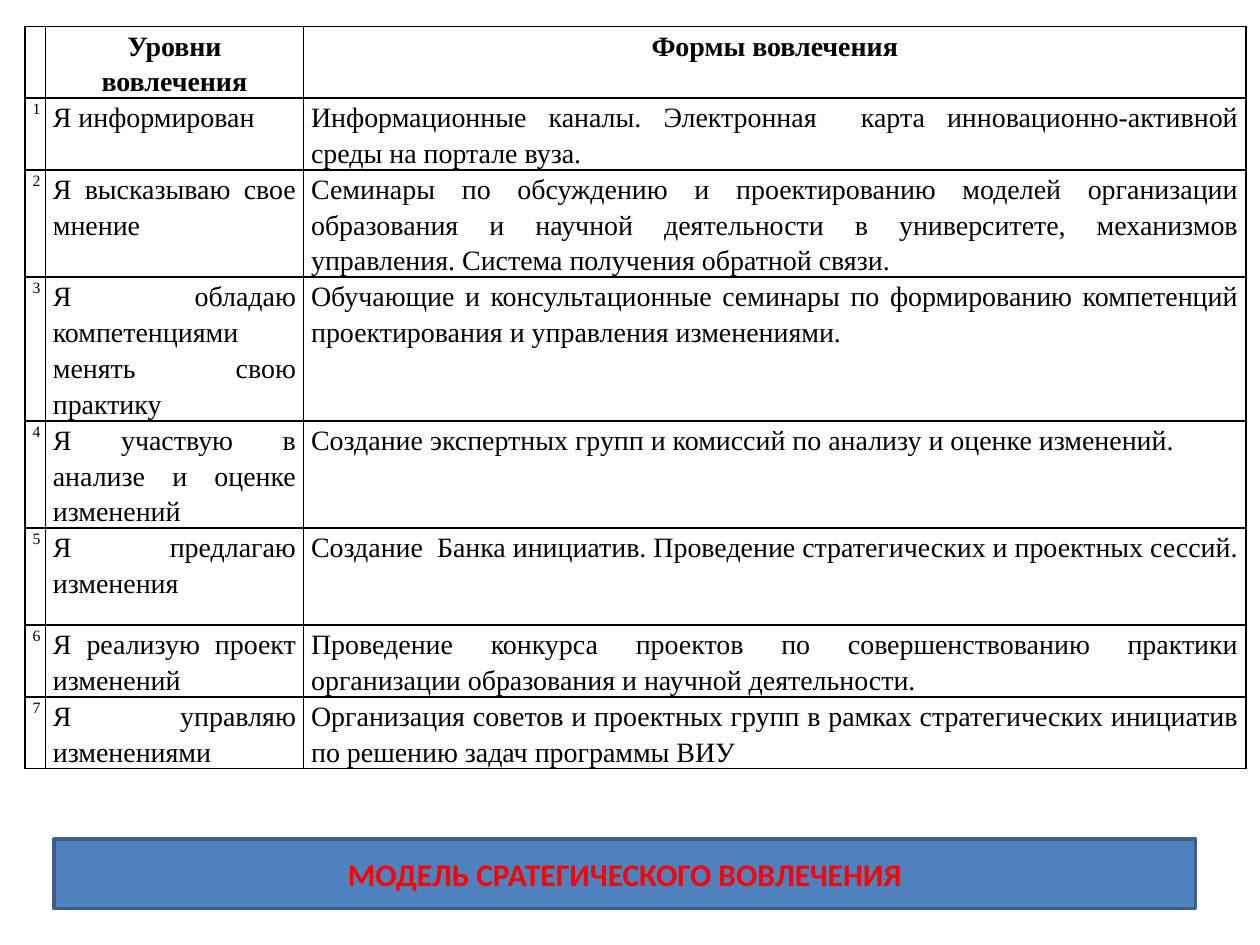
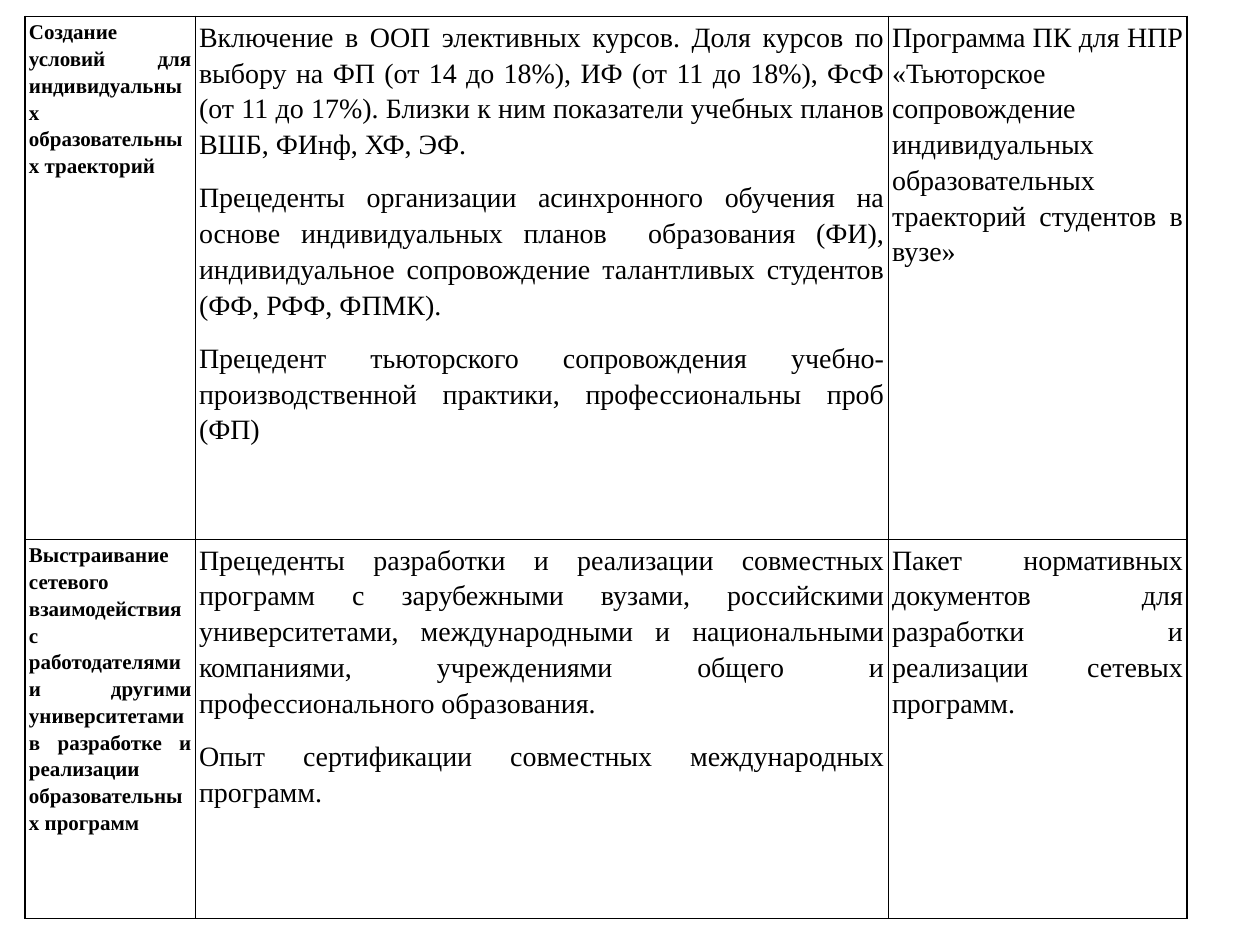
from lxml.etree import SubElement
from pptx import Presentation
from pptx.dml.color import RGBColor
from pptx.enum.shapes import MSO_SHAPE as Shape
from pptx.enum.text import MSO_ANCHOR as Anchor, PP_ALIGN as Align
from pptx.oxml.ns import qn
from pptx.util import Inches, Pt

BLACK = RGBColor(0, 0, 0)
WHITE = RGBColor(255, 255, 255)
RED = RGBColor(255, 0, 0)
BLUE = RGBColor(0x4F, 0x81, 0xBD)
DARK_BLUE = RGBColor(0x3A, 0x5F, 0x8C)
TABLE_FONT = "Times New Roman"
BANNER_FONT = "Calibri"


def add_run(paragraph, text, font, size, color, bold):
    run = paragraph.add_run()
    run.text = text
    run.font.name = font
    run.font.size = Pt(size)
    run.font.color.rgb = color
    run.font.bold = bold


def add_grid(slide, left, top, widths, heights, rows, side_inset, top_inset, first_size, first_bold, header):
    table = slide.shapes.add_table(
        len(heights), len(widths), Inches(left), Inches(top), Inches(sum(widths)), Inches(sum(heights))
    ).table
    table.first_row = False
    table.horz_banding = False
    for column, width in zip(table.columns, widths):
        column.width = Inches(width)
    for row, height in zip(table.rows, heights):
        row.height = Inches(height)
    for row_index, texts in enumerate(rows):
        is_header = header and row_index == 0
        for column_index, text in enumerate(texts):
            cell = table.cell(row_index, column_index)
            cell.margin_left = cell.margin_right = Inches(side_inset)
            cell.margin_top = Inches(top_inset)
            cell.margin_bottom = 0
            properties = cell._tc.get_or_add_tcPr()
            for side in ("a:lnL", "a:lnR", "a:lnT", "a:lnB"):
                border = SubElement(properties, qn(side), w=str(Pt(1)))
                border_fill = SubElement(border, qn("a:solidFill"))
                SubElement(border_fill, qn("a:srgbClr"), val=str(BLACK))
            cell.fill.solid()
            cell.fill.fore_color.rgb = WHITE
            if not text:
                continue
            is_first = column_index == 0
            for index, line in enumerate(text.split("\n")):
                frame = cell.text_frame
                paragraph = frame.add_paragraph() if index else frame.paragraphs[0]
                paragraph.alignment = Align.CENTER if is_header else Align.JUSTIFY
                paragraph.line_spacing = 1.15
                paragraph.space_after = Pt(10)
                size = first_size if is_first else 16
                add_run(paragraph, line, TABLE_FONT, size, BLACK, is_header or (is_first and first_bold))


presentation = Presentation()
presentation.slide_width = Inches(10)
presentation.slide_height = Inches(7.5)
blank_layout = presentation.slide_layouts[6]

involvement_levels = [
    ("Уровни вовлечения", "Формы вовлечения"),
    ("Я информирован",
     "Информационные каналы. Электронная  карта инновационно-активной среды на портале вуза."),
    ("Я высказываю свое мнение",
     "Семинары по обсуждению и проектированию моделей организации образования и научной деятельности "
     "в университете, механизмов управления. Система получения обратной связи."),
    ("Я обладаю компетенциями менять свою практику",
     "Обучающие и консультационные семинары по формированию компетенций проектирования "
     "и управления изменениями."),
    ("Я участвую в анализе и оценке изменений",
     "Создание экспертных групп и комиссий по анализу и оценке изменений."),
    ("Я предлагаю изменения",
     "Создание  Банка инициатив. Проведение стратегических и проектных сессий."),
    ("Я реализую проект изменений",
     "Проведение конкурса проектов по совершенствованию практики организации образования "
     "и научной деятельности."),
    ("Я управляю изменениями",
     "Организация советов и проектных групп в рамках стратегических инициатив по решению "
     "задач программы ВИУ"),
]
numbered_levels = [(str(number) if number else "", *level) for number, level in enumerate(involvement_levels)]

levels_slide = presentation.slides.add_slide(blank_layout)
add_grid(levels_slide, 0.2, 0.21, [0.16, 2.05, 7.48], [0.57, 0.55, 0.83, 1.14, 0.83, 0.77, 0.57, 0.57],
         numbered_levels, side_inset=0.06, top_inset=0, first_size=9, first_bold=False, header=True)

banner = levels_slide.shapes.add_shape(Shape.RECTANGLE, Inches(0.43), Inches(6.66), Inches(9.06), Inches(0.55))
banner.shadow.inherit = False
banner.fill.solid()
banner.fill.fore_color.rgb = BLUE
banner.line.color.rgb = DARK_BLUE
banner.line.width = Pt(2)
banner.text_frame.vertical_anchor = Anchor.MIDDLE
banner_paragraph = banner.text_frame.paragraphs[0]
banner_paragraph.alignment = Align.CENTER
add_run(banner_paragraph, "МОДЕЛЬ СРАТЕГИЧЕСКОГО ВОВЛЕЧЕНИЯ", BANNER_FONT, 18, RED, True)

education_practices = [
    ("Создание условий для индивидуальных образовательных траекторий",
     "Включение в ООП элективных курсов. Доля курсов по выбору на ФП (от 14 до 18%), ИФ (от 11 до 18%), "
     "ФсФ (от 11 до 17%). Близки к ним показатели учебных планов ВШБ, ФИнф, ХФ, ЭФ.\n"
     "Прецеденты организации асинхронного обучения на основе индивидуальных планов  образования (ФИ), "
     "индивидуальное сопровождение талантливых студентов (ФФ, РФФ, ФПМК).\n"
     "Прецедент тьюторского сопровождения учебно-производственной практики, профессиональны проб (ФП)",
     "Программа ПК для НПР «Тьюторское сопровождение индивидуальных образовательных траекторий "
     "студентов в вузе»"),
    ("Выстраивание сетевого взаимодействия с работодателями и другими университетами в разработке "
     "и реализации образовательных программ",
     "Прецеденты разработки и реализации совместных программ с зарубежными вузами, российскими "
     "университетами, международными и национальными компаниями, учреждениями общего "
     "и профессионального образования.\n"
     "Опыт сертификации совместных международных программ.",
     "Пакет нормативных документов для разработки и реализации сетевых программ."),
]

practices_slide = presentation.slides.add_slide(blank_layout)
add_grid(practices_slide, 0.2, 0.13, [1.35, 5.5, 2.37], [4.15, 3.01], education_practices,
         side_inset=0.03, top_inset=0.01, first_size=12, first_bold=True, header=False)

presentation.save("out.pptx")
